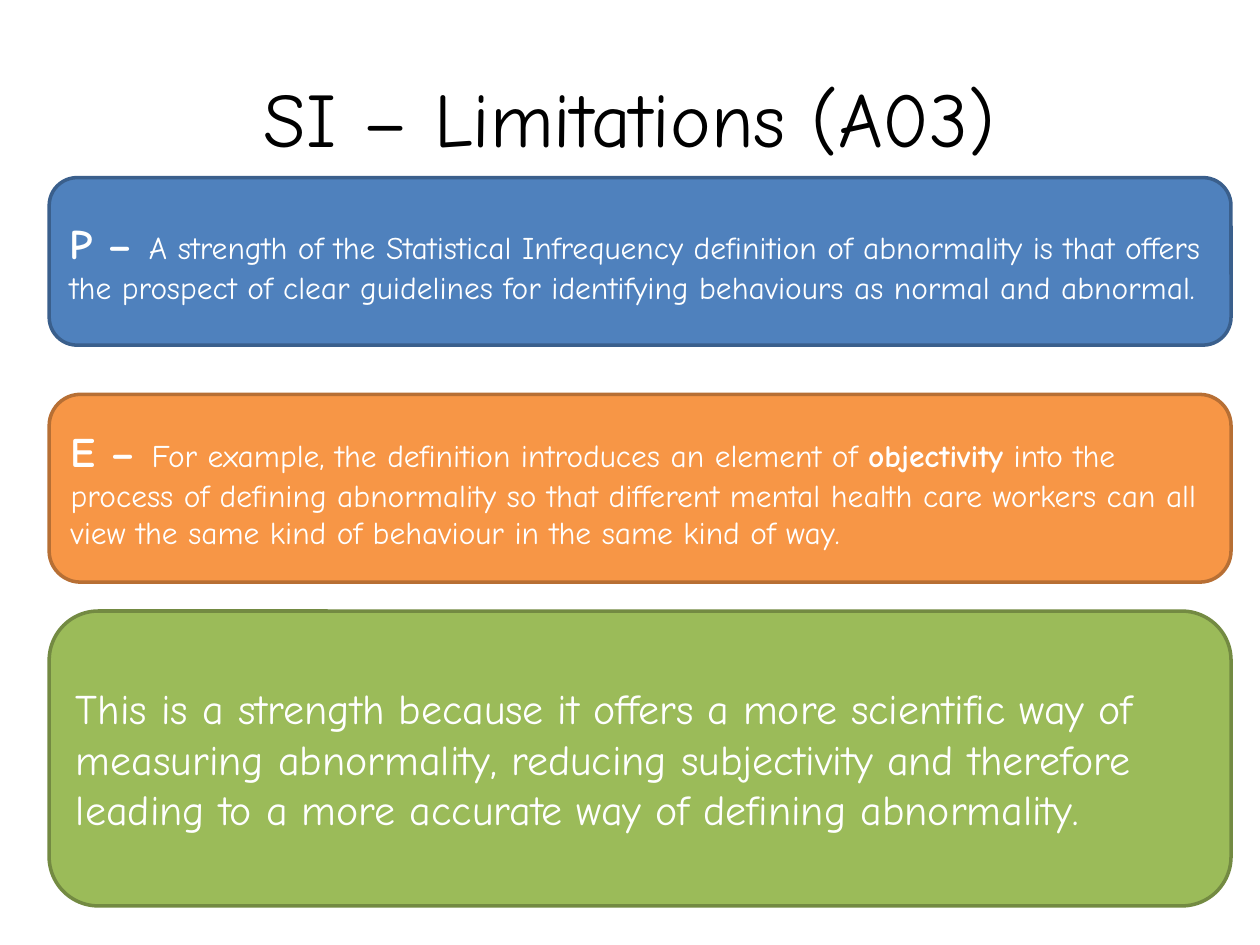
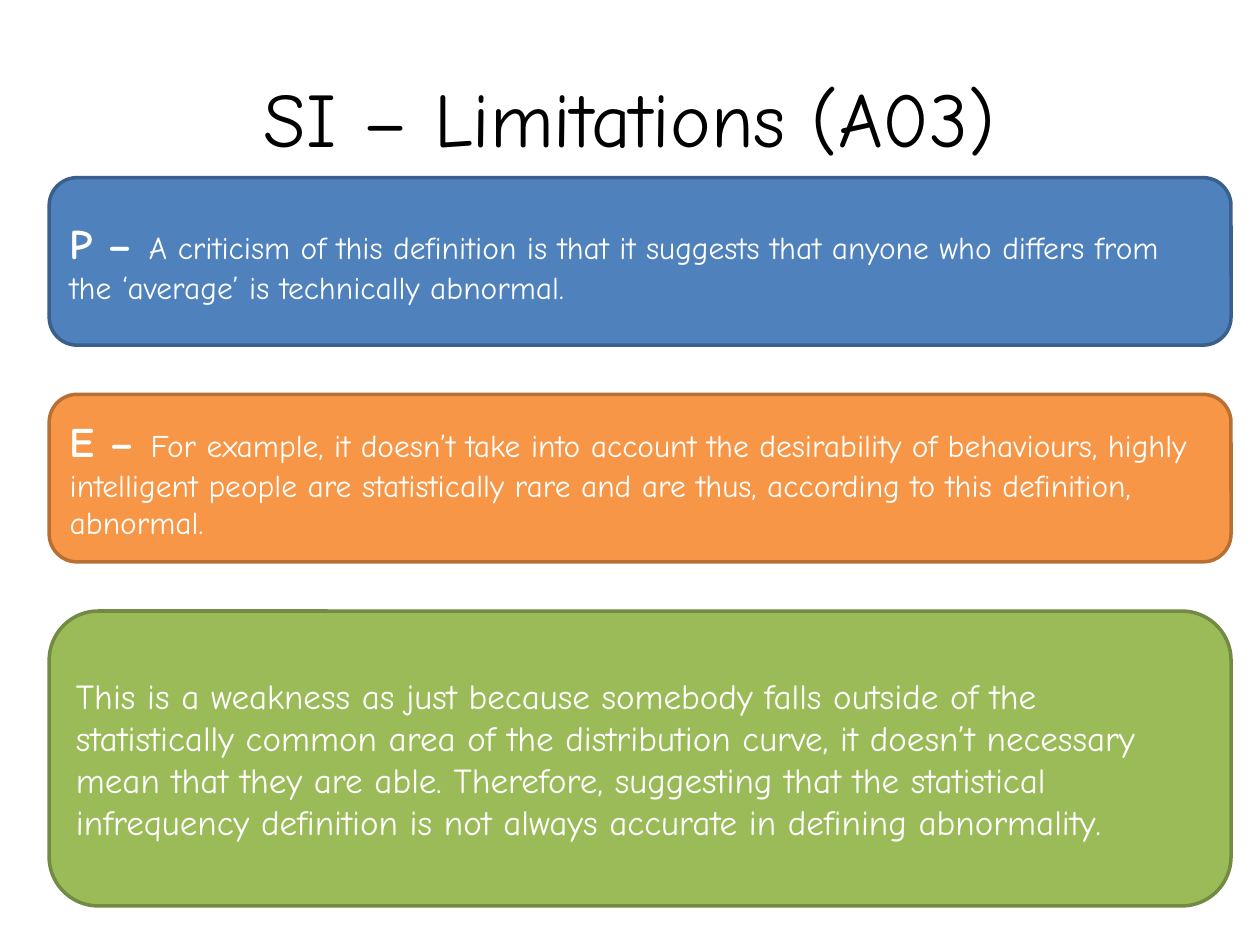
"""Builds two evaluation slides on the statistical infrequency definition."""
from dataclasses import dataclass

from pptx import Presentation
from pptx.dml.color import RGBColor
from pptx.enum.shapes import MSO_SHAPE
from pptx.enum.text import MSO_ANCHOR, PP_ALIGN
from pptx.util import Inches, Pt

ROUNDED = MSO_SHAPE.ROUNDED_RECTANGLE
MIDDLE = MSO_ANCHOR.MIDDLE
LEFT, CENTER = PP_ALIGN.LEFT, PP_ALIGN.CENTER


@dataclass(frozen=True)
class Theme:
    """Colours as fill and outline pairs, type sizes and font."""
    font: str = "Comic Neue"
    ink: str = "000000"
    paper: str = "FFFFFF"
    point: tuple = ("4F81BD", "3A5F8C")
    evidence: tuple = ("F79646", "B76F34")
    explanation: tuple = ("9BBB59", "738A42")
    title_size: int = 44
    letter_size: int = 24
    body_size: int = 18
    outline: int = 2


TITLE = "SI – Limitations (A03)"
PANEL_LEFT, PANEL_WIDTH = Inches(0.39), Inches(9.38)

ARGUMENTS = [
    {
        "point": ["A strength of the Statistical Infrequency definition of abnormality is that "
                  "offers the prospect of clear guidelines for identifying behaviours as normal "
                  "and abnormal."],
        "evidence": ["For example, the definition introduces an element of ",
                     "objectivity",
                     " into the process of defining abnormality so that different mental health "
                     "care workers can all view the same kind of behaviour in the same kind of "
                     "way."],
        "evidence_height": 1.49,
        "explanation": "This is a strength because it offers a more scientific way of measuring "
                       "abnormality, reducing subjectivity and therefore leading to a more "
                       "accurate way of defining abnormality.",
        "explanation_size": 24,
    },
    {
        "point": ["A criticism of this definition is that it suggests that anyone who differs "
                  "from the ‘average’ is technically abnormal."],
        "evidence": ["For example, it doesn’t take into account the desirability of behaviours, "
                     "highly intelligent people are statistically rare and are thus, according "
                     "to this definition, abnormal."],
        "evidence_height": 1.33,
        "explanation": "This is a weakness as just because somebody falls outside of the "
                       "statistically common area of the distribution curve, it doesn’t "
                       "necessary mean that they are able. Therefore, suggesting that the "
                       "statistical infrequency definition is not always accurate in defining "
                       "abnormality.",
        "explanation_size": 20,
    },
]


def add_run(paragraph, text, *, font, size, color, bold=False):
    """Append formatted text to a paragraph."""
    run = paragraph.add_run()
    run.text = text
    run.font.name = font
    run.font.size = Pt(size)
    run.font.bold = bold
    run.font.color.rgb = RGBColor.from_string(color)


class SlideBuilder:
    """Holds the theme and the current slide."""

    def __init__(self, presentation, theme):
        """Start with no slide."""
        self.presentation = presentation
        self.theme = theme
        self.slide = None

    def new_slide(self):
        """Add a blank slide and make it current."""
        self.slide = self.presentation.slides.add_slide(self.presentation.slide_layouts[6])

    def set_text(self, shape, runs, color, alignment):
        """Fill a shape with one paragraph of (text, size, bold) runs."""
        frame = shape.text_frame
        frame.word_wrap = True
        frame.vertical_anchor = MIDDLE
        paragraph = frame.paragraphs[0]
        paragraph.alignment = alignment
        for text, size, bold in runs:
            add_run(paragraph, text, font=self.theme.font, size=size, color=color, bold=bold)

    def title(self, text):
        """Add the centred slide title."""
        box = self.slide.shapes.add_textbox(Inches(0.5), Inches(0.3), Inches(9), Inches(1.25))
        self.set_text(box, [(text, self.theme.title_size, False)], self.theme.ink, CENTER)

    def panel(self, top, height, colors, runs):
        """Add a full-width rounded panel with white text."""
        shape = self.slide.shapes.add_shape(
            ROUNDED, PANEL_LEFT, Inches(top), PANEL_WIDTH, Inches(height))
        fill, outline = colors
        shape.shadow.inherit = False
        shape.fill.solid()
        shape.fill.fore_color.rgb = RGBColor.from_string(fill)
        shape.line.color.rgb = RGBColor.from_string(outline)
        shape.line.width = Pt(self.theme.outline)
        self.set_text(shape, runs, self.theme.paper, LEFT)

    def lettered_panel(self, top, height, colors, letter, parts):
        """Add a panel led by a bold letter; every second part is bold."""
        runs = [(f"{letter} – ", self.theme.letter_size, True)]
        runs += [(part, self.theme.body_size, index % 2 == 1)
                 for index, part in enumerate(parts)]
        self.panel(top, height, colors, runs)


def main():
    """Build and save the presentation."""
    presentation = Presentation()
    presentation.slide_width, presentation.slide_height = Inches(10), Inches(7.5)
    theme = Theme()
    builder = SlideBuilder(presentation, theme)
    for argument in ARGUMENTS:
        builder.new_slide()
        builder.title(TITLE)
        builder.lettered_panel(1.41, 1.33, theme.point, "P", argument["point"])
        builder.lettered_panel(3.13, argument["evidence_height"], theme.evidence, "E",
                               argument["evidence"])
        builder.panel(4.85, 2.34, theme.explanation,
                      [(argument["explanation"], argument["explanation_size"], False)])
    presentation.save("out.pptx")


if __name__ == "__main__":
    main()
